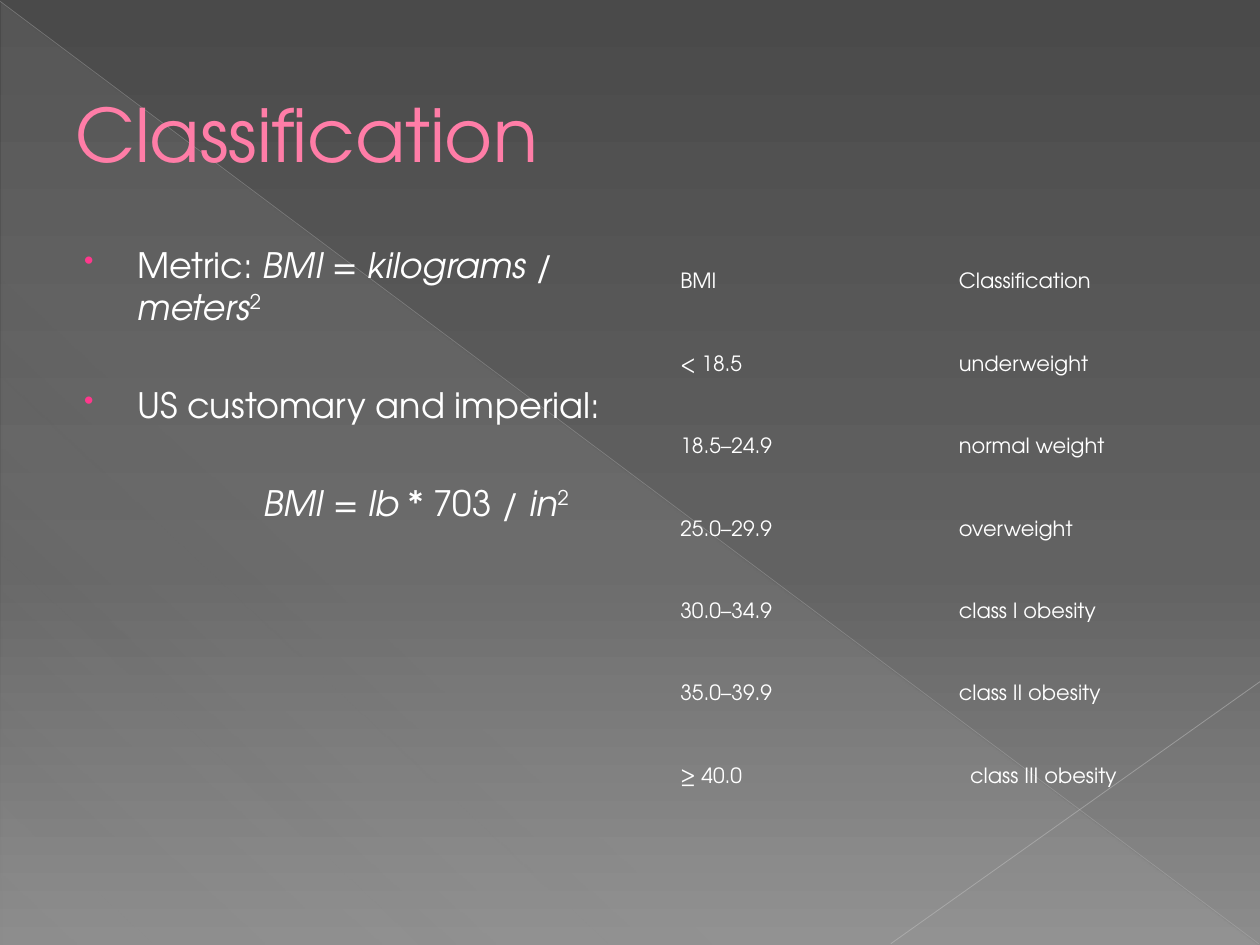
from lxml import etree
from pptx import Presentation
from pptx import util as u
from pptx.dml.color import RGBColor
from pptx.enum import shapes, text
from pptx.oxml import ns

Inches, Pt = u.Inches, u.Pt

WHITE = RGBColor(0xFF, 0xFF, 0xFF)
PINK = RGBColor(0xFF, 0x7D, 0xA7)
HOT_PINK = RGBColor(0xFF, 0x38, 0x8C)
CHARCOAL = RGBColor(0x4A, 0x4A, 0x4A)
GRAPHITE = RGBColor(0x62, 0x62, 0x62)
ASH = RGBColor(0x8C, 0x8C, 0x8C)
HAZE = RGBColor(0xD2, 0xD2, 0xD2)
SILVER = RGBColor(0xBF, 0xBF, 0xBF)
PALE_SILVER = RGBColor(0xC6, 0xC6, 0xC6)

NO_GRID_STYLE = "{2D5ABB26-0587-4C30-8999-92F81FD0307C}"

FORMULAS = [
    dict(runs=[("Metric: ", ""), ("BMI", "i"), (" = ", ""), ("kilograms", "i"),
               (" / ", ""), ("meters", "i"), ("2", "sup")],
         before=4, bullet=True),
    dict(runs=[("US customary and imperial:", "")], before=32, bullet=True),
    dict(runs=[("BMI", "i"), (" = ", ""), ("lb", "i"), (" * 703 / ", ""),
               ("in", "i"), ("2", "sup")],
         before=32, left=1.49),
]

BMI_CLASSES = [
    ("BMI", "Classification"),
    ("< 18.5", "underweight"),
    ("18.5–24.9", "normal weight"),
    ("25.0–29.9", "overweight"),
    ("30.0–34.9", "class I obesity"),
    ("35.0–39.9", "class II obesity"),
    ("≥ 40.0", "class III obesity"),
]


def add_child(parent, tag, **attrs):
    return etree.SubElement(parent, ns.qn(tag), **attrs)


def set_alpha(color, percent):
    add_child(color, "a:alpha", val=str(percent * 1000))


def set_gradient(fill, stops, angle):
    """Fill with (position %, colour, opacity %) stops, angle clockwise."""
    fill.gradient()
    grad = fill._fill._gradFill
    for child in list(grad):
        grad.remove(child)
    gs_list = add_child(grad, "a:gsLst")
    for position, color, opacity in stops:
        gs = add_child(gs_list, "a:gs", pos=str(position * 1000))
        clr = add_child(gs, "a:srgbClr", val=str(color))
        if opacity < 100:
            set_alpha(clr, opacity)
    add_child(grad, "a:lin", ang=str(angle * 60000), scaled="0")


class SlideBuilder:
    font = "TeX Gyre Adventor"

    def __init__(self, slide):
        self.slide = slide

    def background(self, stops, angle):
        set_gradient(self.slide.background.fill, stops, angle)

    def triangle(self, box, stops, angle):
        s = self.slide.shapes.add_shape(
            shapes.MSO_SHAPE.RIGHT_TRIANGLE, *map(Inches, box))
        s.shadow.inherit = False
        s.line.fill.background()
        set_gradient(s.fill, stops, angle)

    def line(self, start, end, color, width, opacity):
        s = self.slide.shapes.add_connector(
            shapes.MSO_CONNECTOR.STRAIGHT, *map(Inches, start + end))
        s.line.color.rgb = color
        s.line.width = Pt(width)
        sp_pr = s._element.spPr
        set_alpha(next(sp_pr.iter(ns.qn("a:srgbClr"))), opacity)
        add_child(sp_pr, "a:effectLst")

    def text_box(self, box, anchor=text.MSO_ANCHOR.TOP):
        tf = self.slide.shapes.add_textbox(*map(Inches, box)).text_frame
        tf.word_wrap = True
        tf.vertical_anchor = anchor
        return tf

    def style(self, p, size, color=WHITE):
        p.font.name = self.font
        p.font.size = Pt(size)
        p.font.color.rgb = color

    def title(self, box, wording):
        p = self.text_box(box, text.MSO_ANCHOR.MIDDLE).paragraphs[0]
        p.text = wording
        self.style(p, 42, PINK)

    def formulas(self, box, items):
        tf = self.text_box(box)
        for i, item in enumerate(items):
            p = tf.add_paragraph() if i else tf.paragraphs[0]
            self.formula(p, **item)

    def formula(self, p, runs, before, bullet=False, left=0.49):
        p.space_before = Pt(before)
        p_pr = p._p.get_or_add_pPr()
        p_pr.set("marL", str(Inches(left)))
        if bullet:
            p_pr.set("indent", str(Inches(-0.42)))
            add_child(add_child(p_pr, "a:buClr"), "a:srgbClr", val=str(HOT_PINK))
            add_child(p_pr, "a:buSzPct", val="80000")
            add_child(p_pr, "a:buChar", char="•")
        self.style(p, 20)
        for wording, kind in runs:
            r = p.add_run()
            r.text = wording
            if kind == "i":
                r.font.italic = True
            elif kind == "sup":
                r._r.get_or_add_rPr().set("baseline", "30000")

    def table(self, box, rows):
        frame = self.slide.shapes.add_table(
            len(rows), len(rows[0]), *map(Inches, box))
        table = frame.table
        table.first_row = table.horz_banding = False
        table._tbl.tblPr.find(ns.qn("a:tableStyleId")).text = NO_GRID_STYLE
        for i, row in enumerate(rows):
            for j, wording in enumerate(row):
                self.cell(table.cell(i, j), wording)
        # The last class name is set in slightly.
        table.cell(len(rows) - 1, 1).margin_left = Inches(0.16)

    def cell(self, cell, wording):
        cell.fill.background()
        cell.vertical_anchor = text.MSO_ANCHOR.MIDDLE
        cell.margin_left = cell.margin_right = Inches(0.07)
        cell.margin_top = cell.margin_bottom = Inches(0.03)
        p = cell.text_frame.paragraphs[0]
        p.text = wording
        self.style(p, 12)


def main():
    prs = Presentation()
    prs.slide_width, prs.slide_height = Inches(10), Inches(7.5)
    b = SlideBuilder(prs.slides.add_slide(prs.slide_layouts[6]))

    b.background([(0, CHARCOAL, 100), (60, GRAPHITE, 100), (100, ASH, 100)], 90)
    b.triangle((0.01, 0.02, 9.98, 7.48),
               [(0, HAZE, 10), (70, HAZE, 8), (100, HAZE, 1)], 133)
    b.line((0, 0.01), (9.99, 7.49), SILVER, 0.39, 35)
    b.line((10, 5.41), (7.07, 7.49), PALE_SILVER, 0.47, 45)

    b.title((0.5, 0.29, 9, 1.53), "Classification")
    b.formulas((0.5, 1.88, 4.42, 4.95), FORMULAS)
    b.table((5.33, 1.92, 4.42, 4.58), BMI_CLASSES)

    prs.save("out.pptx")


if __name__ == "__main__":
    main()
